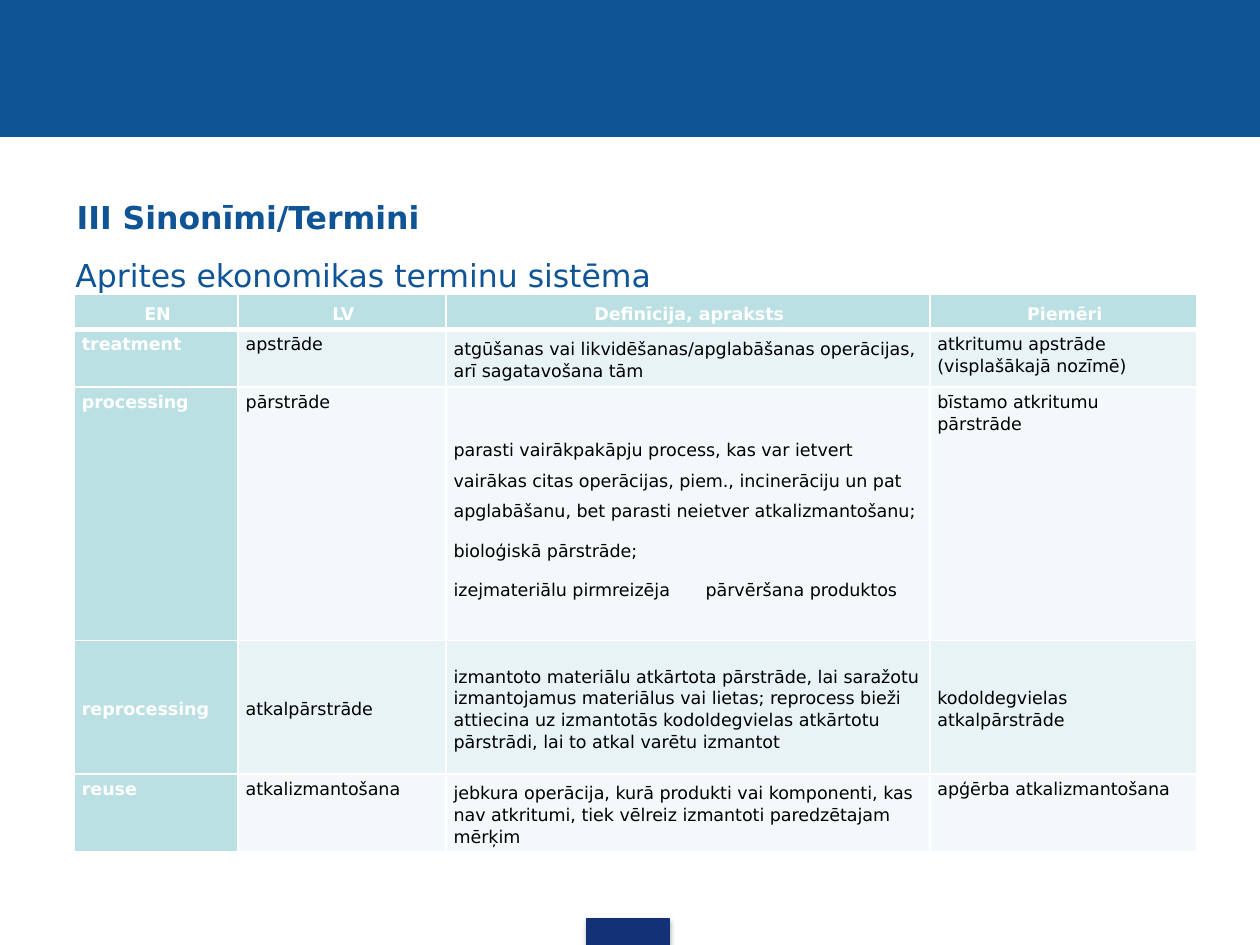
from lxml.etree import SubElement
from pptx import Presentation
from pptx.dml.color import RGBColor
from pptx.enum.shapes import MSO_SHAPE
from pptx.enum.text import MSO_ANCHOR, PP_ALIGN
from pptx.oxml.ns import qn
from pptx.util import Inches, Pt

COLORS = {
    "blue": "0F5494", "navy": "133176", "white": "FFFFFF", "black": "000000",
    "teal": "BBE0E3", "odd": "E7F3F4", "even": "F3F9FA",
}
FONT = "DejaVu Sans"
WIDTH, HEIGHT = Inches(10), Inches(7.5)


def rgb(name):
    return RGBColor.from_string(COLORS[name])


def write(paragraph, text, size, color, bold=False):
    run = paragraph.add_run()
    run.text = text
    run.font.color.rgb = rgb(color)
    for key, value in {"name": FONT, "size": Pt(size), "bold": bold}.items():
        setattr(run.font, key, value)


deck = Presentation()
deck.slide_width, deck.slide_height = WIDTH, HEIGHT
slide = deck.slides.add_slide(deck.slide_layouts[6])

bands = []
for left, top, width, height, color in [
    (0, 0, 1, 0.144, "blue"),
    (0.466, 0.972, 0.065, 0.029, "navy"),
]:
    band = slide.shapes.add_shape(
        MSO_SHAPE.RECTANGLE, int(left * WIDTH), int(top * HEIGHT),
        int(width * WIDTH), int(height * HEIGHT))
    band.shadow.inherit = False
    band.fill.solid()
    band.fill.fore_color.rgb = rgb(color)
    band.line.color.rgb = rgb(color)
    band.line.width = Pt(0.75)
    bands.append(band)

effects = bands[1]._element.spPr.find(qn("a:effectLst"))
shadow = SubElement(effects, qn("a:outerShdw"), blurRad=str(Pt(3.1)),
                    dist=str(Pt(1.8)), dir="5400000", rotWithShape="0")
shade = SubElement(shadow, qn("a:srgbClr"), val=COLORS["black"])
SubElement(shade, qn("a:alpha"), val="35000")

for text, left, top, bold in [
    ("III Sinonīmi/Termini", 0.051, 0.203, True),
    ("Aprites ekonomikas terminu sistēma", 0.05, 0.264, False),
]:
    heading = slide.shapes.add_textbox(
        int(left * WIDTH), int(top * HEIGHT), int(0.9 * WIDTH), int(0.05 * HEIGHT))
    heading.text_frame.word_wrap = True
    write(heading.text_frame.paragraphs[0], text, 18, "blue", bold)

rows = [
    ["EN", "LV", "Definīcija, apraksts", "Piemēri"],
    ["treatment", "apstrāde",
     "atgūšanas vai likvidēšanas/apglabāšanas operācijas, arī sagatavošana tām",
     "atkritumu apstrāde\n(visplašākajā nozīmē)"],
    ["processing", "pārstrāde",
     "parasti vairākpakāpju process, kas var ietvert vairākas citas operācijas, "
     "piem., incinerāciju un pat apglabāšanu, bet parasti neietver atkalizmantošanu;\n"
     "bioloģiskā pārstrāde;\n"
     "izejmateriālu pirmreizēja \tpārvēršana produktos",
     "bīstamo atkritumu\npārstrāde"],
    ["reprocessing", "atkalpārstrāde",
     "izmantoto materiālu atkārtota pārstrāde, lai saražotu izmantojamus materiālus "
     "vai lietas; reprocess bieži attiecina uz izmantotās kodoldegvielas atkārtotu "
     "pārstrādi, lai to atkal varētu izmantot",
     "kodoldegvielas atkalpārstrāde"],
    ["reuse", "atkalizmantošana",
     "jebkura operācija, kurā produkti vai komponenti, kas nav atkritumi, "
     "tiek vēlreiz izmantoti paredzētajam mērķim",
     "apģērba atkalizmantošana"],
]
column_widths = [1.3, 1.65, 3.84, 2.12]
row_heights = [0.28, 0.46, 2.01, 1.06, 0.62]
margins = {"margin_left": 0.06, "margin_top": 0.03,
           "margin_right": 0.04, "margin_bottom": 0}

terms = slide.shapes.add_table(
    len(rows), len(column_widths), int(0.059 * WIDTH), int(0.311 * HEIGHT),
    Inches(sum(column_widths)), Inches(sum(row_heights))).table
for column, width in zip(terms.columns, column_widths):
    column.width = Inches(width)
for row, height in zip(terms.rows, row_heights):
    row.height = Inches(height)

for r, texts in enumerate(rows):
    for c, text in enumerate(texts):
        cell = terms.cell(r, c)
        label = r == 0 or c == 0
        for key, value in margins.items():
            setattr(cell, key, Inches(value))
        centred = r in (0, 3) or c == 2
        cell.vertical_anchor = MSO_ANCHOR.MIDDLE if centred else MSO_ANCHOR.TOP

        for side in ("L", "R", "T", "B"):
            thick = (r, side) in ((0, "B"), (1, "T"))
            border = SubElement(cell._tc.get_or_add_tcPr(), qn(f"a:ln{side}"),
                                w=str(Pt(3 if thick else 1)))
            paint = SubElement(border, qn("a:solidFill"))
            SubElement(paint, qn("a:srgbClr"), val=COLORS["white"])
        cell.fill.solid()
        cell.fill.fore_color.rgb = rgb("teal" if label else "odd" if r % 2 else "even")

        for i, line in enumerate(text.split("\n")):
            frame = cell.text_frame
            paragraph = frame.add_paragraph() if i else frame.paragraphs[0]
            paragraph.alignment = PP_ALIGN.CENTER if r == 0 else PP_ALIGN.LEFT
            spacious = (r, c) == (2, 2)
            paragraph.line_spacing = 1.5 if spacious else 1.07
            if spacious:
                paragraph.space_after = Pt(5.2)
            write(paragraph, line, 10, "white" if label else "black", label)

deck.save("out.pptx")
